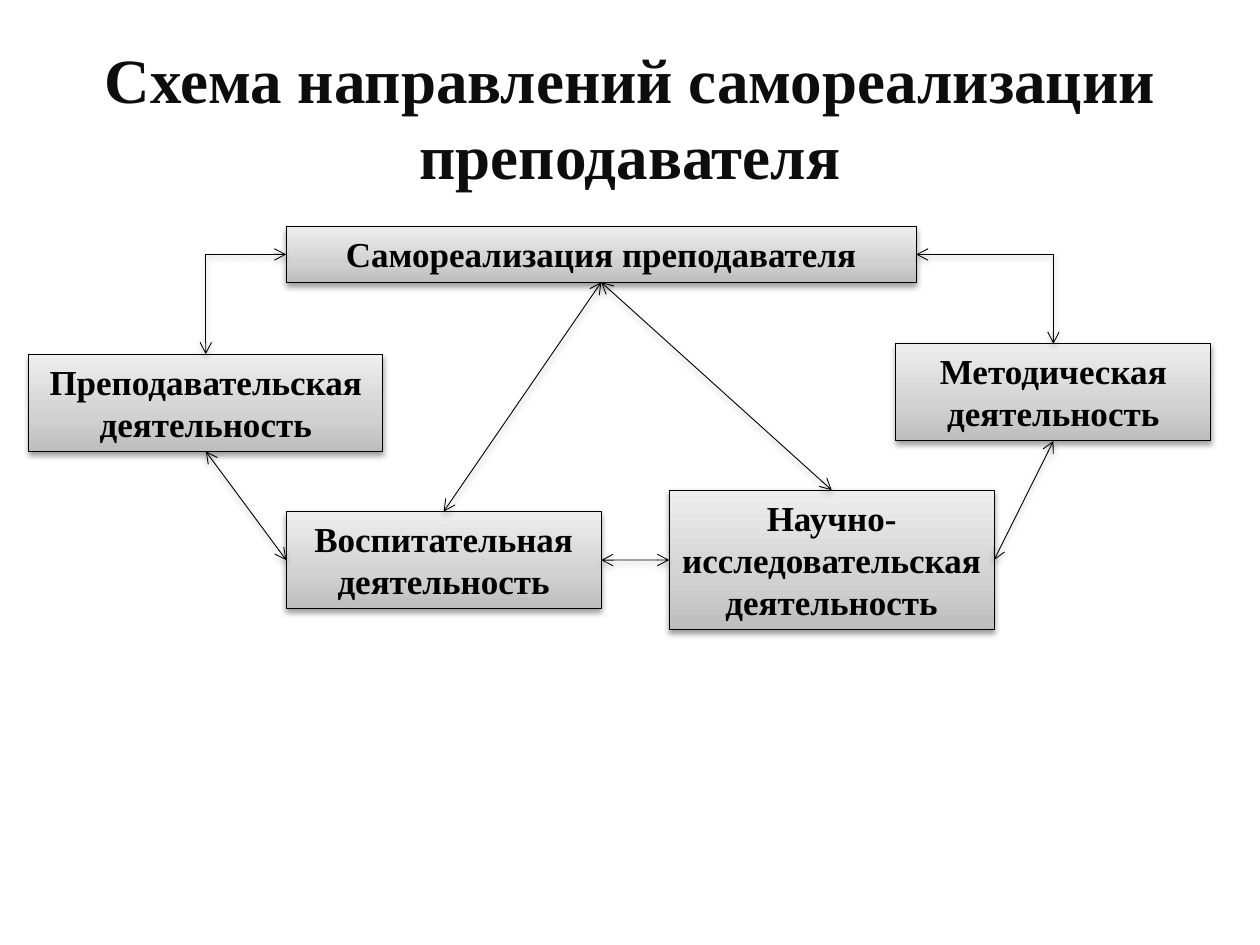
from copy import deepcopy

from lxml.etree import SubElement
from pptx import Presentation
from pptx.dml.color import RGBColor
from pptx.enum.shapes import MSO_CONNECTOR, MSO_SHAPE
from pptx.enum.text import MSO_ANCHOR, MSO_AUTO_SIZE, PP_ALIGN
from pptx.oxml.ns import qn
from pptx.util import Cm, Pt

COLORS = {
    "title": "0D0D0D",
    "black": "000000",
    "dark": "BDBDBD",
    "middle": "D1D1D1",
    "light": "EEEEEE",
}
GRADIENT = [("dark", 0), ("middle", 0.35), ("light", 1)]
FONT = "Times New Roman"
TOP, LEFT, BOTTOM, RIGHT = range(4)

BOXES = {
    "self": ("Самореализация преподавателя", 5.19, 0, 12.7, 1.12),
    "teaching": ("Преподавательская деятельность", 0, 2.57, 7.14, 1.96),
    "upbringing": ("Воспитательная деятельность", 5.19, 5.74, 6.35, 1.96),
    "research": ("Научно-исследовательская деятельность", 12.91, 5.31, 6.55, 2.82),
    "methods": ("Методическая деятельность", 17.48, 2.36, 6.35, 1.96),
}
LINKS = [
    ("self", LEFT, "teaching", TOP, True),
    ("teaching", BOTTOM, "upbringing", LEFT, False),
    ("self", BOTTOM, "upbringing", TOP, False),
    ("self", BOTTOM, "research", TOP, False),
    ("upbringing", RIGHT, "research", LEFT, False),
    ("research", RIGHT, "methods", BOTTOM, False),
    ("self", RIGHT, "methods", TOP, True),
]


def rgb(name):
    """Return the named colour."""
    return RGBColor.from_string(COLORS[name])


def write_text(shape, text, size=20, color="black", anchor=MSO_ANCHOR.TOP,
               auto_size=MSO_AUTO_SIZE.SHAPE_TO_FIT_TEXT):
    """Write one bold centred paragraph into a shape."""
    frame = shape.text_frame
    frame.word_wrap = True
    frame.auto_size = auto_size
    frame.vertical_anchor = anchor
    paragraph = frame.paragraphs[0]
    paragraph.alignment = PP_ALIGN.CENTER
    run = paragraph.add_run()
    run.text = text
    run.font.name = FONT
    run.font.size = Pt(size)
    run.font.bold = True
    run.font.color.rgb = rgb(color)


def style_outline(shape):
    """Give a shape or connector a thin black line and a soft shadow below."""
    shape.line.color.rgb = rgb("black")
    shape.line.width = Pt(0.5)
    effects = SubElement(shape._element.spPr, qn("a:effectLst"))
    shadow = SubElement(effects, qn("a:outerShdw"), blurRad=str(Pt(3.5)),
                        dist=str(Pt(2)), dir="5400000", rotWithShape="0")
    color = SubElement(shadow, qn("a:srgbClr"), val=COLORS["black"])
    SubElement(color, qn("a:alpha"), val="38000")


def fill_gradient(shape):
    """Fill a shape with grey that lightens from bottom to top."""
    shape.fill.gradient()
    shape.fill.gradient_angle = 90
    stop_list = shape._element.spPr.find(".//" + qn("a:gsLst"))
    stop_list.append(deepcopy(stop_list[0]))
    for stop, (color, position) in zip(shape.fill.gradient_stops, GRADIENT):
        stop.color.rgb = rgb(color)
        stop.position = position


def add_box(slide, text, left, top, width, height):
    """Add one labelled rectangle."""
    shape = slide.shapes.add_shape(
        MSO_SHAPE.RECTANGLE, Cm(left), Cm(top), Cm(width), Cm(height))
    fill_gradient(shape)
    style_outline(shape)
    write_text(shape, text)
    return shape


def add_link(slide, start, start_side, end, end_side, bent):
    """Join two rectangles with a double-headed arrow."""
    kind = MSO_CONNECTOR.ELBOW if bent else MSO_CONNECTOR.STRAIGHT
    connector = slide.shapes.add_connector(kind, 0, 0, 0, 0)
    connector.begin_connect(start, start_side)
    connector.end_connect(end, end_side)
    style_outline(connector)
    if bent:
        connector._element.spPr.find(qn("a:prstGeom")).set("prst", "bentConnector2")
    line = connector._element.spPr.find(qn("a:ln"))
    for tag in ("a:headEnd", "a:tailEnd"):
        SubElement(line, qn(tag), type="arrow")


def add_title(slide, left, top, width, height):
    """Add the slide heading."""
    title = slide.shapes.add_textbox(Cm(left), Cm(top), Cm(width), Cm(height))
    write_text(title, "Схема направлений самореализации преподавателя", size=36,
               color="title", anchor=MSO_ANCHOR.MIDDLE, auto_size=MSO_AUTO_SIZE.NONE)


def add_diagram(slide, left, top):
    """Add the rectangles and the arrows between them."""
    shapes = {
        name: add_box(slide, text, left + x, top + y, width, height)
        for name, (text, x, y, width, height) in BOXES.items()
    }
    for start, start_side, end, end_side, bent in LINKS:
        add_link(slide, shapes[start], start_side, shapes[end], end_side, bent)


def main():
    """Build and save the presentation."""
    presentation = Presentation()
    presentation.slide_width = Cm(25.4)
    presentation.slide_height = Cm(19.05)
    slide = presentation.slides.add_slide(presentation.slide_layouts[6])
    add_title(slide, 1.27, 0.76, 22.86, 3.18)
    add_diagram(slide, 0.58, 4.57)
    presentation.save("out.pptx")


if __name__ == "__main__":
    main()
